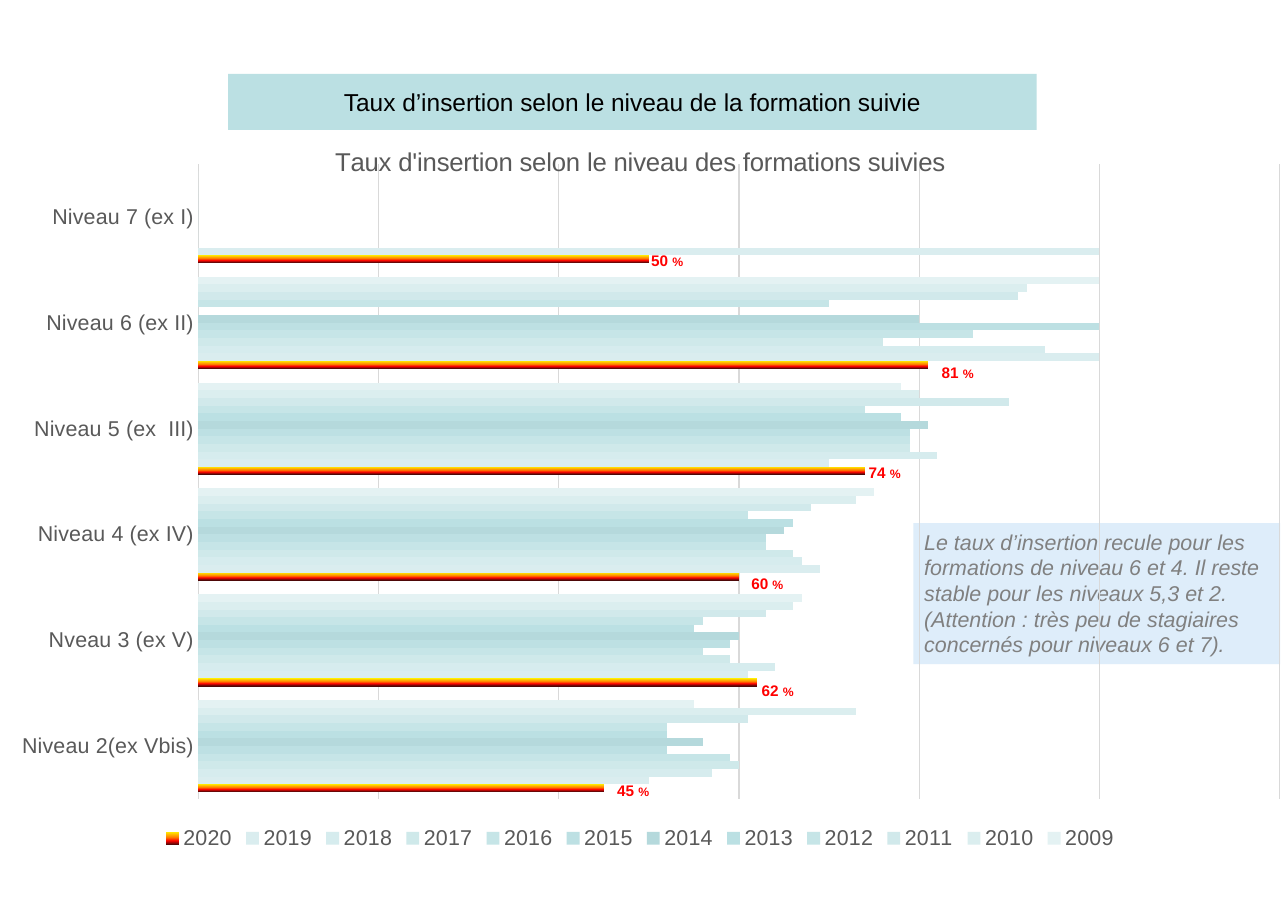
"""Build the slide on job insertion rates by training level."""
import pptx
import pptx.chart.data
import pptx.dml.color
import pptx.enum.chart
import pptx.enum.shapes
import pptx.enum.text
import pptx.oxml
import pptx.util
from pptx.oxml.ns import nsdecls, qn

SLIDE_WIDTH, SLIDE_HEIGHT = 11.69, 8.27
FONT = "Arial"
COLORS = {"banner": "BBE0E3", "note": "DEEDFA", "note_text": "808080", "black": "000000",
          "rate": "FF0000", "axis_text": "595959", "grid": "D9D9D9"}

HEADING = "Taux d’insertion selon le niveau de la formation suivie"
CHART_TITLE = "Taux d'insertion selon le niveau des formations suivies"
NOTE = ["Le taux d’insertion recule pour les formations de niveau 6 et 4. "
        "Il reste stable pour les niveaux 5,3 et 2.",
        "(Attention : très peu de stagiaires concernés pour niveaux 6 et 7)."]
LEVELS = ["Niveau 7 (ex I)", "Niveau 6 (ex II)", "Niveau 5 (ex  III)",
          "Niveau 4 (ex IV)", "Nveau 3 (ex V)", "Niveau 2(ex Vbis)"]
YEARS = {
    "2009": ("E4F2F3", (0, 100, 78, 75, 67, 55)),
    "2010": ("DBEEEF", (0, 92, 80, 73, 66, 73)),
    "2011": ("D1E9EB", (0, 91, 90, 68, 63, 61)),
    "2012": ("C6E5E7", (0, 70, 74, 61, 56, 52)),
    "2013": ("BBE0E3", (0, 0, 78, 66, 55, 52)),
    "2014": ("B5D9DC", (0, 80, 81, 65, 60, 56)),
    "2015": ("BDE0E3", (0, 100, 79, 63, 59, 52)),
    "2016": ("C6E5E7", (0, 86, 79, 63, 56, 59)),
    "2017": ("CFE9EA", (0, 76, 79, 66, 59, 60)),
    "2018": ("D6ECEE", (0, 94, 82, 67, 64, 57)),
    "2019": ("DAEDEF", (100, 100, 70, 69, 61, 50)),
    "2020": (None, (50, 81, 74, 60, 62, 45)),
}
FLAME = [(0, "FFF200"), (45, "FF7A00"), (70, "FF0300"), (100, "4D0808")]
RATE_NUDGES = [(-0.08, -0.22), (0.02, -0.16), (-0.07, -0.22),
               (0.01, -0.17), (-0.06, -0.16), (0.02, -0.21)]

CHART_BOX = (0, 1.09, 11.62, 6.67)
PLOT_SHARES = {"x": 0.155, "y": 0.06, "w": 0.845, "h": 0.864}
AXIS_MAX = 120


def inches(box):
    return [pptx.util.Inches(length) for length in box]


def rgb(name):
    return pptx.dml.color.RGBColor.from_string(COLORS.get(name, name))


def style(font, size, color, **options):
    for key, value in {"name": FONT, "size": pptx.util.Pt(size), **options}.items():
        setattr(font, key, value)
    font.color.rgb = rgb(color)


def thin_line(line):
    line.color.rgb = rgb("grid")
    line.width = pptx.util.Pt(0.75)


def add_panel(slide, box, color):
    panel = slide.shapes.add_shape(pptx.enum.shapes.MSO_SHAPE.RECTANGLE, *inches(box))
    panel.shadow.inherit = False
    panel.fill.solid()
    panel.fill.fore_color.rgb = rgb(color)
    panel.line.fill.background()
    return panel.text_frame


def set_frame(frame, **options):
    for key, value in options.items():
        setattr(frame, key, value)


def add_note(slide):
    frame = add_panel(slide, (8.29, 4.75, 3.33, 1.28), "note")
    set_frame(frame, word_wrap=True, vertical_anchor=pptx.enum.text.MSO_ANCHOR.TOP,
              auto_size=pptx.enum.text.MSO_AUTO_SIZE.SHAPE_TO_FIT_TEXT)
    frame.text = "\n".join(NOTE)
    for paragraph in frame.paragraphs:
        paragraph.alignment = pptx.enum.text.PP_ALIGN.LEFT
        style(paragraph.runs[0].font, 14, "note_text", italic=True)


def add_heading(slide):
    frame = add_panel(slide, (2.07, 0.67, 7.34, 0.51), "banner")
    set_frame(frame, word_wrap=False, vertical_anchor=pptx.enum.text.MSO_ANCHOR.MIDDLE)
    frame.text = HEADING
    frame.paragraphs[0].alignment = pptx.enum.text.PP_ALIGN.CENTER
    style(frame.paragraphs[0].runs[0].font, 16, "black")


def add_rates(slide):
    left, top, width, height = CHART_BOX
    plot_left = left + PLOT_SHARES["x"] * width
    plot_top = top + PLOT_SHARES["y"] * height
    point = PLOT_SHARES["w"] * width / AXIS_MAX
    pitch = PLOT_SHARES["h"] * height / len(LEVELS)
    for row, (rate, (dx, dy)) in enumerate(zip(YEARS["2020"][1], RATE_NUDGES), 1):
        box = (plot_left + rate * point + dx, plot_top + row * pitch + dy, 0.49, 0.27)
        frame = slide.shapes.add_textbox(*inches(box)).text_frame
        set_frame(frame, word_wrap=False,
                  auto_size=pptx.enum.text.MSO_AUTO_SIZE.SHAPE_TO_FIT_TEXT)
        for text, size in ((f"{rate} ", 10), ("%", 8)):
            run = frame.paragraphs[0].add_run()
            run.text = text
            style(run.font, size, "rate", bold=True)


def clear_background():
    return pptx.oxml.parse_xml(f'<c:spPr {nsdecls("c", "a")}><a:noFill/>'
                               '<a:ln><a:noFill/></a:ln></c:spPr>')


def flame_fill():
    stops = "".join(f'<a:gs pos="{share * 1000}"><a:srgbClr val="{color}"/></a:gs>'
                    for share, color in FLAME)
    return pptx.oxml.parse_xml(f'<a:gradFill {nsdecls("a")}><a:gsLst>{stops}</a:gsLst>'
                               '<a:lin ang="5400000" scaled="0"/></a:gradFill>')


def place_plot(chart):
    area = chart._chartSpace.chart.plotArea
    for layout in area.findall(qn("c:layout")):
        area.remove(layout)
    modes = '<c:layoutTarget val="inner"/><c:xMode val="edge"/><c:yMode val="edge"/>'
    shares = "".join(f'<c:{key} val="{share}"/>' for key, share in PLOT_SHARES.items())
    area.insert(0, pptx.oxml.parse_xml(
        f'<c:layout {nsdecls("c")}><c:manualLayout>{modes}{shares}</c:manualLayout></c:layout>'))
    area.append(clear_background())
    chart._chartSpace.chart.addnext(clear_background())


def add_rate_chart(slide):
    data = pptx.chart.data.CategoryChartData(number_format="0")
    data.categories = LEVELS
    for year, (_, rates) in YEARS.items():
        data.add_series(year, rates)
    chart = slide.shapes.add_chart(pptx.enum.chart.XL_CHART_TYPE.BAR_CLUSTERED,
                                   *inches(CHART_BOX), data).chart
    style(chart.font, 14, "black")
    chart.has_title = True
    chart.chart_title.text_frame.text = CHART_TITLE
    style(chart.chart_title.text_frame.paragraphs[0].runs[0].font, 16.8, "axis_text", bold=False)

    chart.has_legend = True
    chart.legend.position = pptx.enum.chart.XL_LEGEND_POSITION.BOTTOM
    chart.legend.include_in_layout = False
    style(chart.legend.font, 14, "axis_text")

    levels, rates = chart.category_axis, chart.value_axis
    levels.reverse_order = True
    levels.major_tick_mark = pptx.enum.chart.XL_TICK_MARK.NONE
    style(levels.tick_labels.font, 14, "axis_text")
    thin_line(levels.format.line)
    rates.visible = False
    rates.minimum_scale, rates.maximum_scale, rates.major_unit = 0, AXIS_MAX, 20
    rates.has_major_gridlines = True
    thin_line(rates.major_gridlines.format.line)

    plot = chart.plots[0]
    plot.gap_width, plot.overlap, plot.vary_by_categories = 182, 0, False
    for series, (color, _) in zip(plot.series, YEARS.values()):
        if color:
            series.format.fill.solid()
            series.format.fill.fore_color.rgb = rgb(color)
        else:
            series._element.get_or_add_spPr().insert(0, flame_fill())
    place_plot(chart)


def main():
    deck = pptx.Presentation()
    deck.slide_width, deck.slide_height = inches((SLIDE_WIDTH, SLIDE_HEIGHT))
    slide = deck.slides.add_slide(deck.slide_layouts[6])
    for add_part in (add_note, add_heading, add_rates, add_rate_chart):
        add_part(slide)
    deck.save("out.pptx")


if __name__ == "__main__":
    main()
